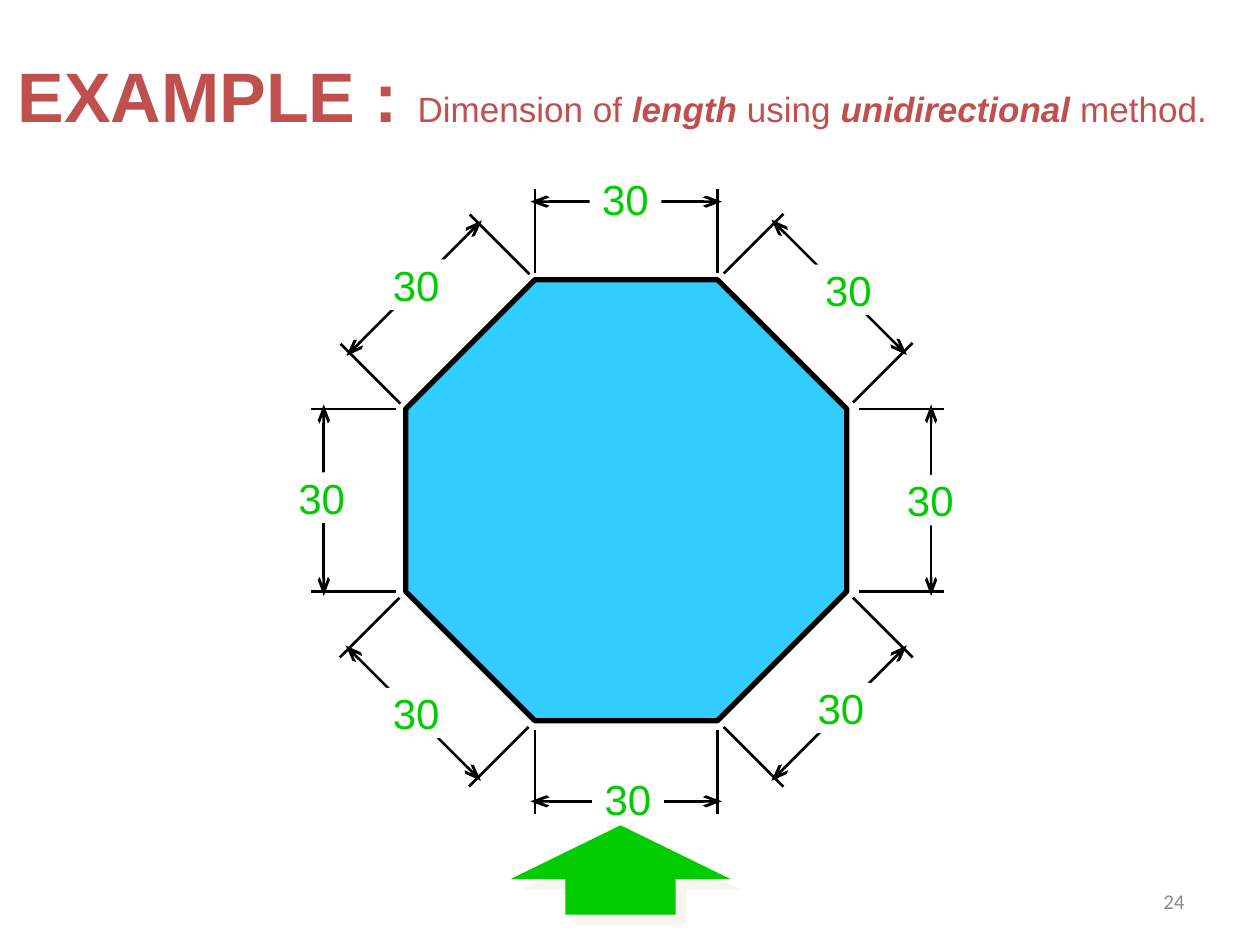
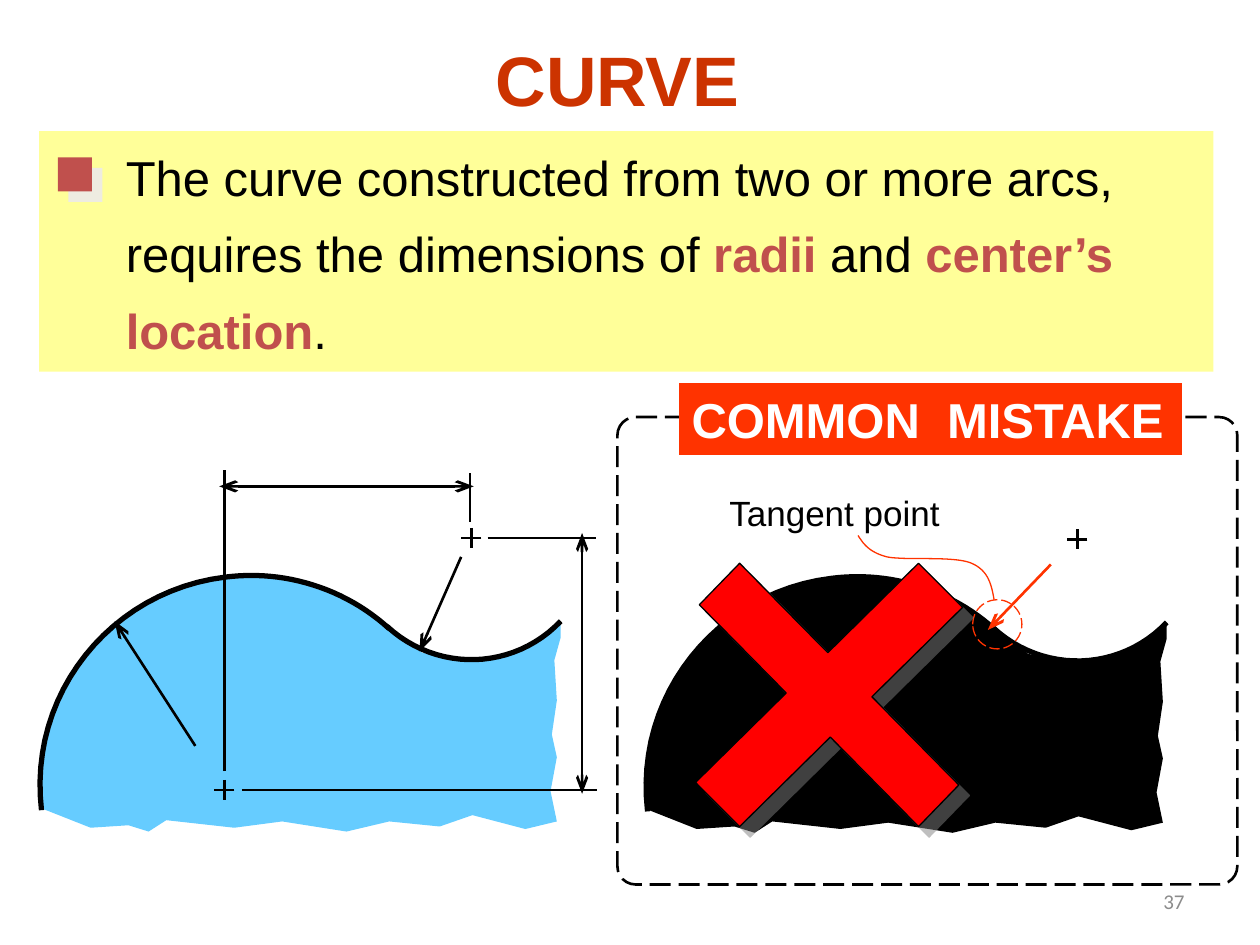
from math import cos, hypot, radians, sin

from lxml.etree import SubElement
from pptx import Presentation
from pptx.dml.color import RGBColor
from pptx.enum.dml import MSO_LINE
from pptx.enum.shapes import MSO_CONNECTOR, MSO_SHAPE
from pptx.enum.text import MSO_ANCHOR, PP_ALIGN
from pptx.oxml.ns import qn
from pptx.util import Cm, Pt

# Shared colours and text formats
BLACK, WHITE, GREEN = "000000", "FFFFFF", "00CC00"
BRICK, ORANGE, CREAM = "C0504D", "FF3300", "EEECE1"
TITLE = dict(size=40, bold=True)
SMALL = dict(size=20)
BODY = dict(size=28)
ACCENT = dict(size=28, bold=True, color=BRICK)
NUMBER = dict(size=12, name="Calibri", color="8C8C8C")
DIMENSION = dict(size=24, color=GREEN)


def rgb(value):
    return RGBColor.from_string(value)


def grid(value):
    """Length on the inch grid of the slide."""
    return Cm(value * 2.54)


# Text
def write(sp, paragraphs, insets=(0.1, 0.05), wrap=True, anchor=MSO_ANCHOR.TOP,
          align=PP_ALIGN.LEFT, spacing=None):
    """Fill a shape; each paragraph is a list of (text, format) runs."""
    tf = sp.text_frame
    side, edge = map(grid, insets)
    frame = dict(word_wrap=wrap, vertical_anchor=anchor, margin_left=side,
                 margin_right=side, margin_top=edge, margin_bottom=edge)
    for key, value in frame.items():
        setattr(tf, key, value)
    for i, runs in enumerate(paragraphs):
        p = tf.paragraphs[0] if i == 0 else tf.add_paragraph()
        p.alignment = align
        if spacing:
            p.line_spacing = spacing
        for text, fmt in runs:
            r = p.add_run()
            r.text = text
            values = dict(name="Arial", color=BLACK) | fmt
            r.font.color.rgb = rgb(values.pop("color"))
            values["size"] = Pt(values["size"])
            for key, value in values.items():
                setattr(r.font, key, value)


def add_text(s, box, paragraphs, **layout):
    sp = s.shapes.add_textbox(*map(grid, box))
    write(sp, paragraphs, **layout)
    return sp


def add_page_number(s, number):
    add_text(s, (7.17, 6.95, 2.33, 0.4), [[(number, NUMBER)]],
             anchor=MSO_ANCHOR.MIDDLE, align=PP_ALIGN.RIGHT)


# Shapes
def paint(sp, fill=None, line=None, width=1.5, dash=None, shadow=None):
    """Set fill, outline and an offset shadow given as (colour, opacity %)."""
    if fill:
        sp.fill.solid()
        sp.fill.fore_color.rgb = rgb(fill)
    else:
        sp.fill.background()
    if line:
        sp.line.color.rgb = rgb(line)
        sp.line.width = Pt(width)
        if dash:
            sp.line.dash_style = dash
    else:
        sp.line.fill.background()
    sp.shadow.inherit = False
    if shadow:
        color, opacity = shadow
        effects = sp._element.spPr.find(qn("a:effectLst"))
        outer = SubElement(effects, qn("a:outerShdw"), blurRad="0",
                           dist=str(Pt(8.5)), dir=str(45 * 60000), algn="ctr")
        clr = SubElement(outer, qn("a:srgbClr"), val=color)
        SubElement(clr, qn("a:alpha"), val=str(opacity * 1000))


def add_shape(s, kind, box, adjustments=(), **look):
    sp = s.shapes.add_shape(kind, *map(grid, box))
    for i, value in enumerate(adjustments):
        sp.adjustments[i] = value
    paint(sp, **look)
    return sp


def add_path(s, points, close=False, **look):
    pts = [(grid(x), grid(y)) for x, y in points]
    builder = s.shapes.build_freeform(*pts[0], scale=1.0)
    builder.add_line_segments(pts[1:], close=close)
    sp = builder.convert_to_shape()
    paint(sp, **look)
    return sp


def bezier(start, *segments, steps=24):
    """Points along joined cubic curves, each given by three points."""
    points = [start]
    for c1, c2, end in segments:
        a = points[-1]
        for k in range(1, steps + 1):
            t = k / steps
            u = 1 - t
            points.append(tuple(
                u**3 * p0 + 3 * u * u * t * p1 + 3 * u * t * t * p2 + t**3 * p3
                for p0, p1, p2, p3 in zip(a, c1, c2, end)))
    return points


def add_line(s, start, end, ends=(), color=BLACK):
    """Straight line; ends names the arrowheads: headEnd, tailEnd."""
    c = s.shapes.add_connector(MSO_CONNECTOR.STRAIGHT,
                               *map(grid, (*start, *end)))
    c.line.color.rgb = rgb(color)
    c.line.width = Pt(1.5)
    ln = c.line._get_or_add_ln()
    for tag in ends:
        SubElement(ln, qn(f"a:{tag}"), type="arrow", w="med", len="lg")
    SubElement(c._element.spPr, qn("a:effectLst"))
    return c


BOTH, TIP = ("headEnd", "tailEnd"), ("tailEnd",)


def add_center_mark(s, x, y):
    add_line(s, (x, y - 0.08), (x, y + 0.08))
    add_line(s, (x + 0.08, y), (x - 0.08, y))


# Octagon dimensions
def add_side_dimension(s, side, gap, label_at):
    """Dimension one side of the octagon, counted clockwise from the top."""
    angle = radians(45 * side - 90)
    out = cos(angle), sin(angle)
    along = -out[1], out[0]

    def place(distance, shift):
        return tuple(c + (1.75 + distance) * o + shift * a
                     for c, o, a in zip((4.97, 3.97), out, along))

    for end in (-0.725, 0.725):
        add_line(s, place(gap, end), place(gap + 0.67, end))
    add_line(s, place(gap + 0.57, -0.76), place(gap + 0.57, 0.76), BOTH)
    label = add_shape(s, MSO_SHAPE.RECTANGLE, (*label_at, 0.57, 0.4), fill=WHITE)
    write(label, [[("30", DIMENSION)]], insets=(0.1, 0), wrap=False)


def build_octagon_slide(s):
    add_shape(s, MSO_SHAPE.OCTAGON, (3.22, 2.22, 3.5, 3.5), [0.293],
              fill="33CCFF", line=BLACK, width=3)
    sides = [(0.05, (4.68, 1.38)), (0.07, (6.45, 2.1)), (0.1, (7.1, 3.77)),
             (0.07, (6.39, 5.42)), (0.07, (4.7, 6.14)), (0.07, (3.02, 5.46)),
             (0.08, (2.27, 3.75)), (0.06, (3.02, 2.06))]
    for side, (gap, label_at) in enumerate(sides):
        add_side_dimension(s, side, gap, label_at)
    add_shape(s, MSO_SHAPE.UP_ARROW, (4.05, 6.55, 1.75, 0.71), [0.5, 0.603],
              fill=GREEN, shadow=(CREAM, 50))

    # Heading
    red = dict(color=BRICK)
    plain = SMALL | red
    strong = plain | dict(bold=True, italic=True)
    add_text(s, (0.04, 0.37, 9.72, 0.77), [[
        ("EXAMPLE : ", TITLE | red), ("Dimension of ", plain),
        ("length", strong), (" using ", plain),
        ("unidirectional", strong), (" method.", plain)]], wrap=False)
    add_page_number(s, "24")


# Curved part
TORN_BODY = [
    (0.34, 6.42), (0.32, 6.13), (0.37, 5.83), (0.49, 5.5), (0.65, 5.24),
    (0.88, 4.99), (1.13, 4.81), (1.4, 4.68), (1.67, 4.6), (2.07, 4.57),
    (2.42, 4.63), (2.77, 4.77), (3.09, 4.99), (3.35, 5.18), (3.67, 5.25),
    (3.97, 5.22), (4.19, 5.13), (4.45, 4.94), (4.45, 5.06), (4.4, 5.24),
    (4.42, 5.56), (4.38, 5.83), (4.42, 6.01), (4.37, 6.28), (4.42, 6.52),
    (4.17, 6.58), (3.75, 6.47), (3.49, 6.56), (3.09, 6.52), (2.75, 6.6),
    (2.24, 6.52), (1.86, 6.57), (1.32, 6.51), (1.18, 6.6), (1.02, 6.55),
    (0.72, 6.57)]
LARGE_ARC = bezier((0.33, 6.43), ((0.22, 5.51), (0.88, 4.69), (1.79, 4.58)),
                   ((2.26, 4.52), (2.74, 4.67), (3.09, 4.99)))
SMALL_ARC = bezier((3.07, 4.97), ((3.47, 5.34), (4.08, 5.32), (4.45, 4.93)))


def add_curved_part(s, fill, dx=0, dy=0):
    def moved(points):
        return [(x + dx, y + dy) for x, y in points]

    add_path(s, moved(TORN_BODY), close=True, fill=fill)
    for arc in (LARGE_ARC, SMALL_ARC):
        add_path(s, moved(arc), line=BLACK, width=3)
    for center in moved([(3.74, 4.27), (1.78, 6.27)]):
        add_center_mark(s, *center)


def build_curve_slide(s):
    # Title and statement
    add_shape(s, MSO_SHAPE.RECTANGLE, (0.31, 1.04, 9.32, 1.91), fill="FFFF99")
    add_text(s, (0.9, 0.98, 8.24, 1.88), [
        [("The curve constructed from two or more arcs,", BODY)],
        [("requires the dimensions of ", BODY), ("radii", ACCENT),
         (" and ", BODY), ("center’s", ACCENT)],
        [("location", ACCENT), (".", BODY)]], wrap=False, spacing=1.3)
    add_shape(s, MSO_SHAPE.RECTANGLE, (0.46, 1.25, 0.27, 0.27),
              fill=BRICK, shadow=(CREAM, 100))
    add_text(s, (0.65, 0, 8.5, 1.25), [[("CURVE", TITLE | dict(color="CC3300"))]],
             anchor=MSO_ANCHOR.MIDDLE, align=PP_ALIGN.CENTER)

    # Correct dimensioning: radii, then centre locations
    add_curved_part(s, "66CCFF")
    for start, end, ends in [
            ((1.55, 5.92), (0.91, 4.93), TIP), ((3.66, 4.42), (3.33, 5.17), TIP),
            ((1.92, 6.27), (4.74, 6.27), ()), ((3.87, 4.27), (4.73, 4.27), ()),
            ((4.62, 4.23), (4.62, 6.3), BOTH), ((1.78, 6.12), (1.78, 3.73), ()),
            ((3.73, 4.14), (3.73, 3.75), ()), ((3.76, 3.86), (1.74, 3.86), BOTH)]:
        add_line(s, start, end, ends)

    # Common mistake
    add_shape(s, MSO_SHAPE.ROUNDED_RECTANGLE, (4.9, 3.31, 4.92, 3.71), [0.039],
              line=BLACK, dash=MSO_LINE.LONG_DASH)
    banner = add_shape(s, MSO_SHAPE.RECTANGLE, (5.39, 3.04, 3.99, 0.57), fill=ORANGE)
    write(banner, [[("COMMON  MISTAKE", ACCENT | dict(color=WHITE))]])
    add_curved_part(s, BLACK, 4.81, 0.01)
    add_line(s, (8.34, 4.48), (7.84, 5), TIP, ORANGE)

    # Tangent point callout
    add_text(s, (5.69, 3.85, 1.9, 0.43), [[("Tangent point", SMALL)]])
    add_shape(s, MSO_SHAPE.OVAL, (7.72, 4.76, 0.39, 0.39), line=ORANGE,
              width=0.75, dash=MSO_LINE.LONG_DASH)
    leader = bezier((7.89, 4.76), ((7.87, 4.65), (7.85, 4.53), (7.71, 4.47)),
                    ((7.57, 4.41), (7.19, 4.45), (7.04, 4.42)),
                    ((6.89, 4.38), (6.85, 4.31), (6.81, 4.25)))
    add_path(s, leader, line=ORANGE, width=0.75)

    # Rejection cross
    cross = [(5.55, 4.8), (6.24, 5.5), (5.52, 6.21), (5.87, 6.56), (6.59, 5.85),
             (7.29, 6.56), (7.61, 6.23), (6.92, 5.53), (7.64, 4.82),
             (7.29, 4.47), (6.57, 5.18), (5.87, 4.47)]
    add_path(s, cross, close=True, fill="FF0000", line=BLACK, width=0.75,
             shadow=("808080", 50))
    add_page_number(s, "37")


def main():
    prs = Presentation()
    prs.slide_width, prs.slide_height = Cm(25.4), Cm(19.05)
    for build in (build_octagon_slide, build_curve_slide):
        build(prs.slides.add_slide(prs.slide_layouts[6]))
    prs.save("out.pptx")


if __name__ == "__main__":
    main()
